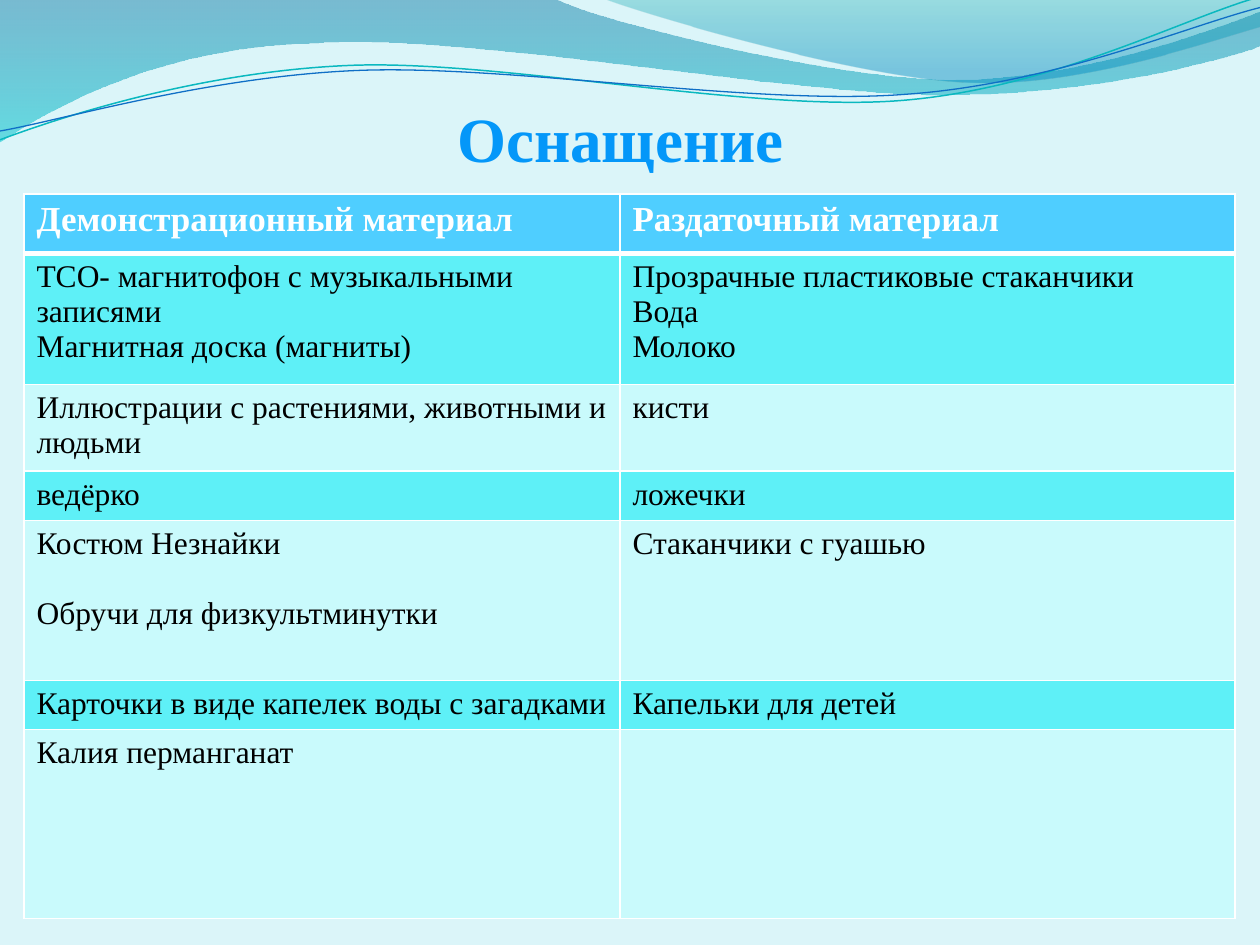
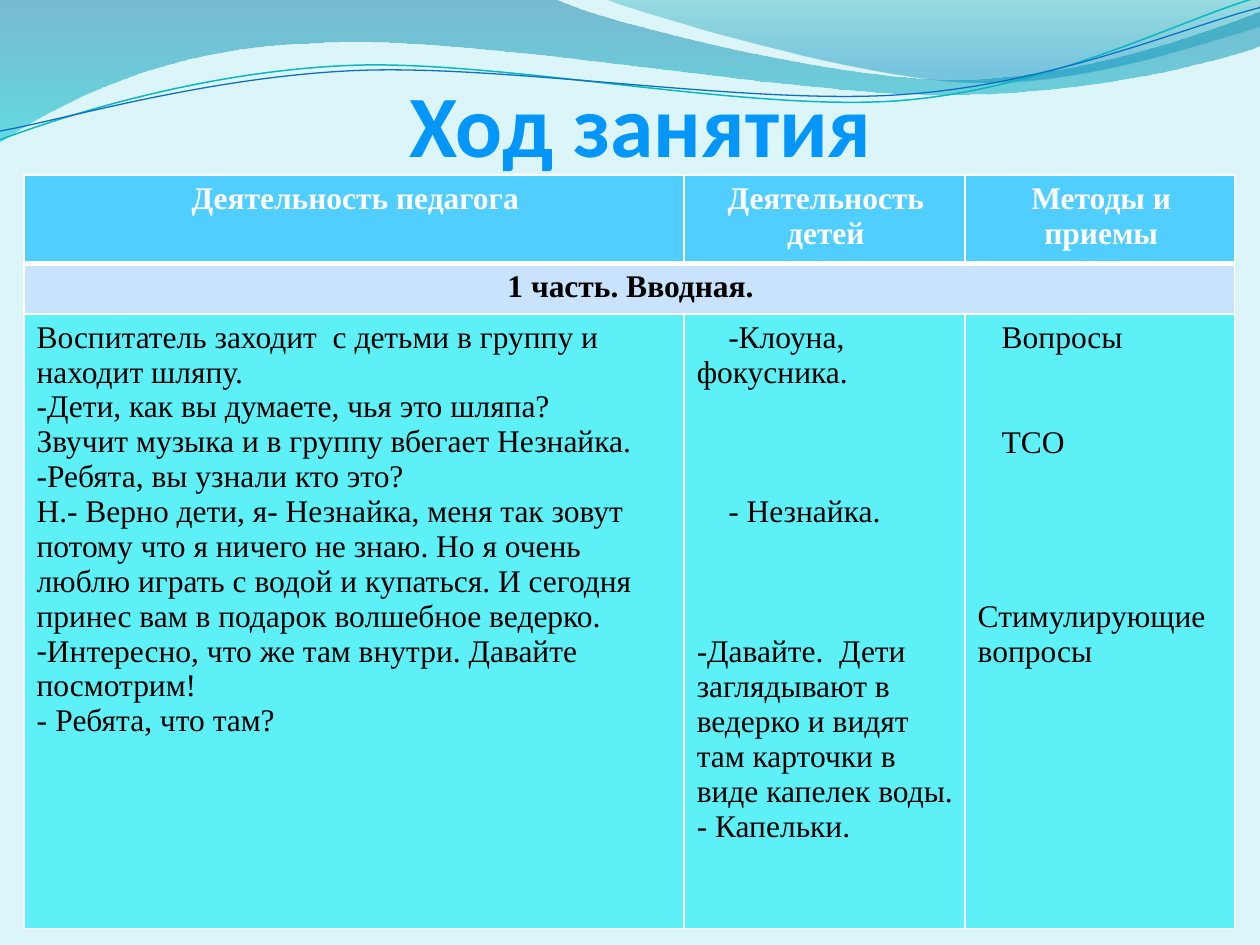
from dataclasses import dataclass

from lxml.etree import Element, SubElement
from pptx import Presentation
from pptx.dml.color import RGBColor
from pptx.enum.text import MSO_ANCHOR, PP_ALIGN as ALIGN
from pptx.oxml.ns import qn
from pptx.util import Inches, Pt

COLORS = {
    "background": "DBF5F9", "title": "0497F9",
    "header": "4FCEFF", "dark_row": "5EF0F7", "light_row": "C9FAFC",
    "part_row": "C8E3FB", "white": "FFFFFF", "black": "000000",
    "wave_blue": "0074A1", "wave_cyan": "00C6CF",
    "crest_teal": "00A1A9", "crest_blue": "008BBF",
    "line_teal": "0AB8BF", "line_blue": "0F6FC6",
}
SERIF, SANS = "Times New Roman", "Calibri"
LINE_PT = 20  # height of one 18 pt text line

# Outlines: a start point, then lines (x, y) or Bezier curves (six numbers)
WAVE = [(0, 0), (4.4, -0.01), (4.76, 0.17, 6.64, 0.63, 7.58, 0.63),
        (8.53, 0.63, 9.58, 0.26, 10, 0.09), (10.01, 0.36),
        (9.83, 0.44, 8.7, 0.76, 7.46, 0.75),
        (6.22, 0.75, 3.82, 0.28, 2.57, 0.34),
        (1.29, 0.36, 0.46, 0.83, -0.01, 1.13)]
CREST = [(4.79, -0.01), (5.09, 0.11, 6.82, 0.62, 7.69, 0.65),
         (8.56, 0.69, 9.61, 0.32, 10, 0.21), (10, 0)]
TEAL_LINE = [(0, 1.11), (0.48, 0.93, 1.58, 0.57, 2.77, 0.52),
             (3.95, 0.47, 5.93, 0.89, 7.13, 0.8),
             (8.33, 0.71, 9.38, 0.15, 9.98, -0.02)]
BLUE_LINE = [(0, 1.04), (0.47, 0.96, 1.64, 0.61, 2.83, 0.56),
             (4.03, 0.51, 5.97, 0.84, 7.17, 0.75),
             (8.36, 0.67, 9.41, 0.21, 10, 0.06)]


@dataclass
class Para:
    """A cell paragraph; skip is the number of lines left free above it."""
    text: str
    skip: int = 0
    margin: float = 0
    indent: float = 0
    bullet: str = ""


@dataclass
class RowStyle:
    fill: str
    color: str = "black"
    size: int = 18
    bold: bool = False
    align: ALIGN = ALIGN.LEFT


DARK, LIGHT = RowStyle("dark_row"), RowStyle("light_row")

EQUIPMENT = [
    (0.47, RowStyle("header", "white", 20, True),
     [["Демонстрационный материал"], ["Раздаточный материал"]]),
    (1.04, DARK,
     [["ТСО- магнитофон с музыкальными записями", "Магнитная доска (магниты)"],
      ["Прозрачные пластиковые стаканчики", "Вода", "Молоко"]]),
    (0.69, LIGHT,
     [["Иллюстрации с растениями, животными и людьми"], ["кисти"]]),
    (0.39, DARK, [["ведёрко"], ["ложечки"]]),
    (1.27, LIGHT,
     [["Костюм Незнайки", Para("Обручи для физкультминутки", skip=1)],
      ["Стаканчики с гуашью"]]),
    (0.39, DARK,
     [["Карточки в виде капелек воды с загадками"], ["Капельки для детей"]]),
    (1.5, LIGHT, [["Калия перманганат"], []]),
]

LESSON = [
    (0.7, RowStyle("header", "white", bold=True, align=ALIGN.CENTER),
     [["Деятельность педагога"], ["Деятельность детей"],
      ["Методы и приемы"]]),
    (0.4, RowStyle("part_row", bold=True, align=ALIGN.CENTER),
     [["1 часть. Вводная."]]),
    (4.88, DARK, [
        ["Воспитатель заходит  с детьми в группу и находит шляпу.",
         "-Дети, как вы думаете, чья это шляпа?",
         "Звучит музыка и в группу вбегает Незнайка.",
         "-Ребята, вы узнали кто это?",
         "Н.- Верно дети, я- Незнайка, меня так зовут потому что я ничего "
         "не знаю. Но я очень люблю играть с водой и купаться. И сегодня "
         "принес вам в подарок волшебное ведерко.",
         Para("Интересно, что же там внутри. Давайте посмотрим!", bullet="-"),
         Para("Ребята, что там?", margin=0.15, indent=-0.15, bullet="-")],
        [Para("-Клоуна, фокусника.", indent=0.25),
         Para("- Незнайка.", skip=3, indent=0.25),
         Para("Давайте.  Дети заглядывают в ведерко и видят там карточки "
              "в виде капелек воды.", skip=3, bullet="-"),
         "- Капельки."],
        [Para("Вопросы", indent=0.19),
         Para("ТСО", skip=2, indent=0.19),
         Para("Стимулирующие вопросы", skip=4)],
    ]),
]


def rgb(name):
    return RGBColor.from_string(COLORS[name])


def set_font(p, name, size, color, bold):
    p.font.name = name
    p.font.size = Pt(size)
    p.font.bold = bold
    p.font.color.rgb = rgb(color)


def bend_segments(sp, outline):
    """Join each three line steps of a curve into one Bezier segment."""
    steps = iter(list(sp.element.iter(qn("a:lnTo"))))
    for seg in outline[1:]:
        first = next(steps)
        if len(seg) == 2:
            continue
        curve = Element(qn("a:cubicBezTo"))
        first.addprevious(curve)
        for step in (first, next(steps), next(steps)):
            curve.append(step[0])
            step.getparent().remove(step)


def add_outline(s, outline, close):
    start, *rest = [(Inches(seg[i]), Inches(seg[i + 1]))
                    for seg in outline for i in range(0, len(seg), 2)]
    builder = s.shapes.build_freeform(*start)
    builder.add_line_segments(rest, close=close)
    sp = builder.convert_to_shape()
    bend_segments(sp, outline)
    sp.shadow.inherit = False
    return sp


def add_wave(s, outline, stops):
    """Closed shape with a top-down gradient; stops are (pos, colour, alpha)."""
    sp = add_outline(s, outline, True)
    sp.line.fill.background()
    sp.fill.gradient()
    sp.fill.gradient_angle = 270
    for stop, (position, color, _) in zip(sp.fill.gradient_stops, stops):
        stop.position = position
        stop.color.rgb = rgb(color)
    for clr, (_, _, alpha) in zip(sp.element.iter(qn("a:srgbClr")), stops):
        SubElement(clr, qn("a:alpha"), val=str(alpha * 1000))


def add_wave_line(s, outline, color, width):
    sp = add_outline(s, outline, False)
    sp.fill.background()
    sp.line.color.rgb = rgb(color)
    sp.line.width = Pt(width)


def add_title(s, text, left, bottom, font, size):
    height = 1
    box = s.shapes.add_textbox(Inches(left), Inches(bottom - height),
                               Inches(9.15), Inches(height))
    tf = box.text_frame
    tf.word_wrap = True
    tf.vertical_anchor = MSO_ANCHOR.BOTTOM
    tf.margin_left = tf.margin_right = tf.margin_bottom = 0
    p = tf.paragraphs[0]
    p.text = text
    p.alignment = ALIGN.CENTER
    set_font(p, font, size, "title", True)


def add_slide(prs):
    """Blank slide with the shared background and waves."""
    s = prs.slides.add_slide(prs.slide_layouts[6])
    s.background.fill.solid()
    s.background.fill.fore_color.rgb = rgb("background")
    add_wave(s, WAVE, [(0, "wave_blue", 45), (1, "wave_cyan", 55)])
    add_wave(s, CREST, [(0, "crest_teal", 30), (0.8, "crest_blue", 45)])
    add_wave_line(s, TEAL_LINE, "line_teal", 0.85)
    add_wave_line(s, BLUE_LINE, "line_blue", 0.75)
    return s


def set_borders(cell, top, bottom):
    tc_pr = cell._tc.get_or_add_tcPr()
    for side, width in zip("LRTB", (1, 1, top, bottom)):
        ln = SubElement(tc_pr, qn(f"a:ln{side}"), w=str(Pt(width)))
        fill = SubElement(ln, qn("a:solidFill"))
        SubElement(fill, qn("a:srgbClr"), val=COLORS["white"])


def fill_paragraph(p, para, style):
    p.text = para.text
    p.alignment = style.align
    if para.skip:
        p.space_before = Pt(para.skip * LINE_PT)
    p_pr = p._p.get_or_add_pPr()
    p_pr.set("marL", str(Inches(para.margin)))
    p_pr.set("indent", str(Inches(para.indent)))
    if para.bullet:
        SubElement(p_pr, qn("a:buFont"), typeface=SERIF)
        SubElement(p_pr, qn("a:buChar"), char=para.bullet)
    set_font(p, SERIF, style.size, style.color, style.bold)


def fill_cell(cell, content, style):
    cell.fill.solid()
    cell.fill.fore_color.rgb = rgb(style.fill)
    cell.margin_right = Inches(0.08)
    cell.margin_bottom = Inches(0.03)
    tf = cell.text_frame
    for i, item in enumerate(content):
        p = tf.add_paragraph() if i else tf.paragraphs[0]
        fill_paragraph(p, Para(item) if isinstance(item, str) else item, style)


def add_grid(s, top, widths, rows):
    """Table from (height, style, cells) rows; a lone cell spans its row."""
    height = sum(row[0] for row in rows)
    table = s.shapes.add_table(len(rows), len(widths), Inches(0.19), Inches(top),
                               Inches(sum(widths)), Inches(height)).table
    table.first_row = table.horz_banding = False
    for column, width in zip(table.columns, widths):
        column.width = Inches(width)
    for r, (row_height, style, contents) in enumerate(rows):
        table.rows[r].height = Inches(row_height)
        for c in range(len(widths)):
            set_borders(table.cell(r, c), 3 if r == 1 else 1, 3 if r == 0 else 1)
        if len(contents) == 1:
            table.cell(r, 0).merge(table.cell(r, len(widths) - 1))
        for c, content in enumerate(contents):
            fill_cell(table.cell(r, c), content, style)


def main():
    prs = Presentation()
    prs.slide_width, prs.slide_height = Inches(10), Inches(7.5)

    # Equipment
    s = add_slide(prs)
    add_title(s, "Оснащение", 0.35, 1.39, SERIF, 36)
    add_grid(s, 1.54, [4.73, 4.88], EQUIPMENT)

    # Course of the lesson
    s = add_slide(prs)
    add_title(s, "Ход занятия", 0.51, 1.39, SANS, 50)
    add_grid(s, 1.39, [5.24, 2.23, 2.14], LESSON)

    prs.save("out.pptx")


if __name__ == "__main__":
    main()
